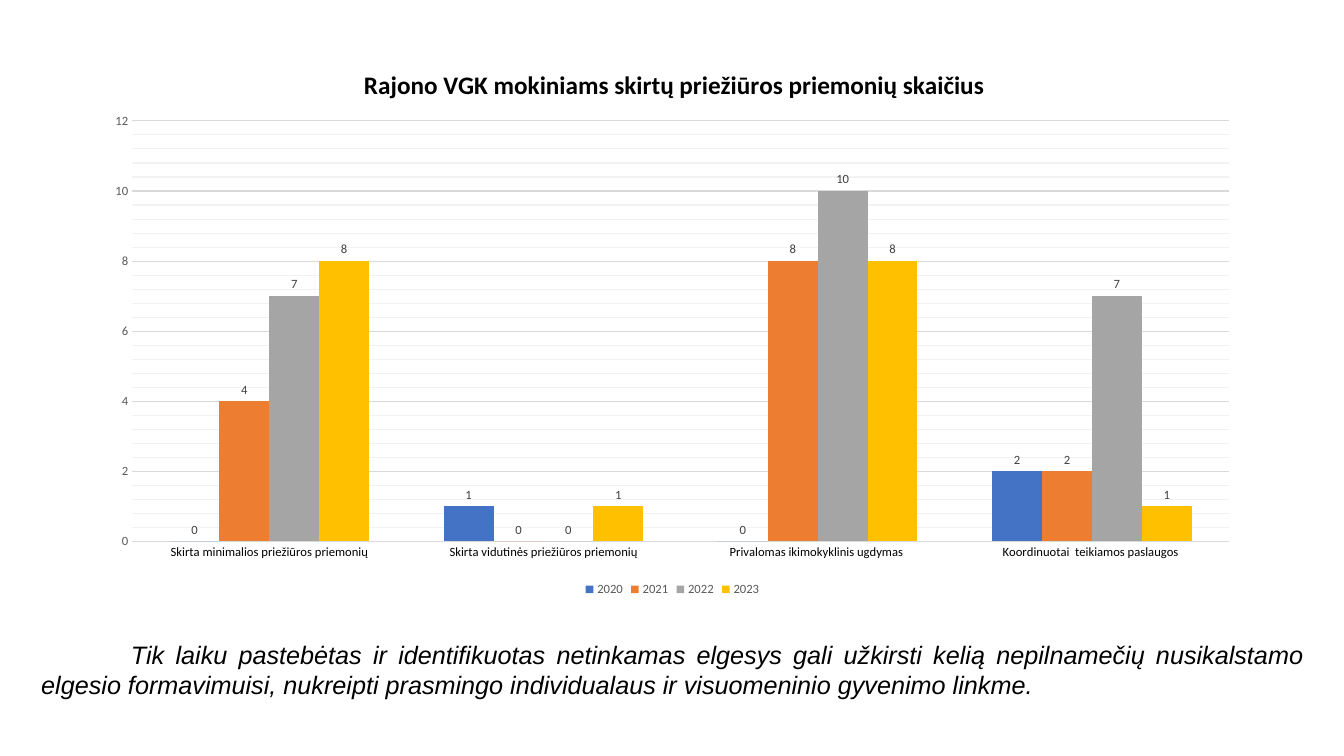
from pptx import Presentation
from pptx.chart.data import CategoryChartData
from pptx.dml.color import RGBColor
from pptx.enum.chart import (XL_CHART_TYPE, XL_LABEL_POSITION,
                             XL_LEGEND_POSITION, XL_TICK_MARK)
from pptx.enum.text import MSO_AUTO_SIZE, PP_ALIGN
from pptx.oxml import parse_xml
from pptx.oxml.ns import nsdecls
from pptx.util import Inches, Pt

COLUMNS = XL_CHART_TYPE.COLUMN_CLUSTERED
OUTSIDE = XL_LABEL_POSITION.OUTSIDE_END
BOTTOM = XL_LEGEND_POSITION.BOTTOM
NO_TICK = XL_TICK_MARK.NONE
JUSTIFY = PP_ALIGN.JUSTIFY
GROW = MSO_AUTO_SIZE.SHAPE_TO_FIT_TEXT

BLACK = RGBColor(0x00, 0x00, 0x00)
DARK = RGBColor(0x40, 0x40, 0x40)
GREY = RGBColor(0x59, 0x59, 0x59)
MAJOR = RGBColor(0xD9, 0xD9, 0xD9)
MINOR = RGBColor(0xF2, 0xF2, 0xF2)
BLUE = RGBColor(0x44, 0x72, 0xC4)
ORANGE = RGBColor(0xED, 0x7D, 0x31)
SILVER = RGBColor(0xA5, 0xA5, 0xA5)
GOLD = RGBColor(0xFF, 0xC0, 0x00)

TITLE = "Rajono VGK mokiniams skirtų priežiūros priemonių skaičius"
MEASURES = [
    "Skirta minimalios priežiūros priemonių",
    "Skirta vidutinės priežiūros priemonių",
    "Privalomas ikimokyklinis ugdymas ",
    "Koordinuotai  teikiamos paslaugos ",
]
YEARS = [
    ("2020", (0, 1, 0, 2), BLUE),
    ("2021", (4, 0, 8, 2), ORANGE),
    ("2022", (7, 0, 10, 7), SILVER),
    ("2023", (8, 1, 8, 1), GOLD),
]
NOTE = ("Tik laiku pastebėtas ir identifikuotas netinkamas elgesys gali "
        "užkirsti kelią nepilnamečių nusikalstamo elgesio formavimuisi, "
        "nukreipti prasmingo individualaus ir visuomeninio gyvenimo linkme.")


def set_font(font, size, color, name="Calibri"):
    font.name = name
    font.size = Pt(size)
    font.color.rgb = color


def pin(parent, index, **parts):
    """Fix a chart part's place, as fractions of the chart's size."""
    for old in parent.xpath("c:layout"):
        parent.remove(old)
    modes = "".join(f'<c:{key}Mode val="edge"/>' for key in "xy")
    sizes = "".join(f'<c:{key} val="{val}"/>' for key, val in parts.items())
    target = '<c:layoutTarget val="inner"/>' if "w" in parts else ""
    parent.insert(index, parse_xml(
        f'<c:layout {nsdecls("c")}><c:manualLayout>{target}{modes}{sizes}'
        '</c:manualLayout></c:layout>'))


def style_axes(chart):
    for axis, color in ((chart.category_axis, BLACK),
                        (chart.value_axis, GREY)):
        axis.major_tick_mark = axis.minor_tick_mark = NO_TICK
        axis.format.line.fill.background()
        set_font(axis.tick_labels.font, 9, color)
    scale = chart.value_axis
    scale.minimum_scale, scale.maximum_scale = 0, 12
    scale.major_unit, scale.minor_unit = 2, 0.4
    scale.has_major_gridlines = scale.has_minor_gridlines = True
    line = scale.major_gridlines.format.line
    line.color.rgb = MAJOR
    line.width = Pt(0.75)
    minor = chart.element.xpath(".//c:valAx/c:minorGridlines")[0]
    minor.append(parse_xml(
        f'<c:spPr {nsdecls("c", "a")}><a:ln w="{Pt(0.75)}"><a:solidFill>'
        f'<a:srgbClr val="{MINOR}"/></a:solidFill></a:ln></c:spPr>'))


def style_bars(plot):
    plot.gap_width = 150
    plot.overlap = 0
    plot.vary_by_categories = False
    for series, (_, _, color) in zip(plot.series, YEARS):
        series.format.fill.solid()
        series.format.fill.fore_color.rgb = color
        labels = series.data_labels
        labels.show_value = True
        labels.position = OUTSIDE
        set_font(labels.font, 9, DARK)


def add_bars(slide, left, top, width, height):
    data = CategoryChartData(number_format="General")
    data.categories = MEASURES
    for year, counts, _ in YEARS:
        data.add_series(year, counts)
    chart = slide.shapes.add_chart(
        COLUMNS, Inches(left), Inches(top), Inches(width), Inches(height),
        data).chart
    set_font(chart.font, 10, BLACK)

    chart.has_title = True
    heading = chart.chart_title
    heading.text_frame.text = TITLE
    font = heading.text_frame.paragraphs[0].runs[0].font
    set_font(font, 18, BLACK)
    font.bold = True
    title = chart.element.xpath("c:chart/c:title")[0]
    pin(title, 1, x=0.23, y=0.04)

    chart.has_legend = True
    chart.legend.position = BOTTOM
    chart.legend.include_in_layout = False
    set_font(chart.legend.font, 9, GREY)

    style_axes(chart)
    style_bars(chart.plots[0])
    area = chart.element.xpath("c:chart/c:plotArea")[0]
    pin(area, 0, x=0.034, y=0.144, w=0.946, h=0.75)


def add_note(slide, left, top, width, height):
    frame = slide.shapes.add_textbox(
        Inches(left), Inches(top), Inches(width), Inches(height)).text_frame
    frame.word_wrap = True
    frame.auto_size = GROW
    frame.text = NOTE
    para = frame.paragraphs[0]
    para.alignment = JUSTIFY
    para._p.get_or_add_pPr().set("indent", str(Inches(0.89)))
    font = para.runs[0].font
    set_font(font, 18, BLACK, "Arial")
    font.italic = True


def main():
    deck = Presentation()
    deck.slide_width = Inches(13.33)
    deck.slide_height = Inches(7.5)
    slide = deck.slides.add_slide(deck.slide_layouts[6])
    add_bars(slide, 0.92, 0.4, 11.5, 5.56)
    add_note(slide, 0.31, 6.29, 12.72, 0.71)
    deck.save("out.pptx")


if __name__ == "__main__":
    main()
